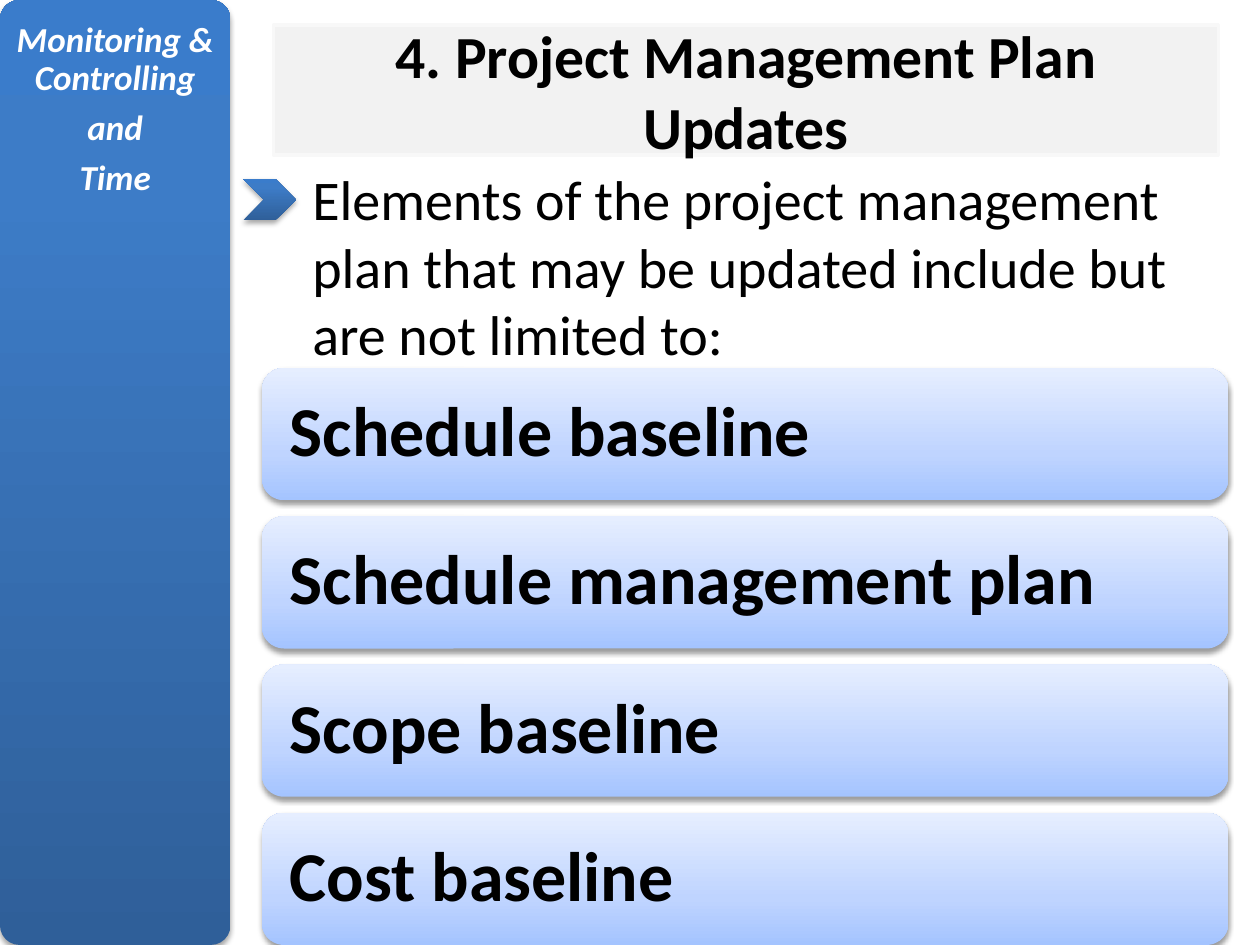
from copy import deepcopy
from dataclasses import dataclass

from lxml.etree import SubElement
from pptx import Presentation
from pptx.dml.color import RGBColor
from pptx.enum.shapes import MSO_SHAPE
from pptx.enum.text import MSO_ANCHOR, PP_ALIGN
from pptx.oxml.ns import qn
from pptx.util import Inches, Pt


@dataclass(frozen=True)
class Theme:
    font: str = "Calibri"
    ink: str = "000000"
    paper: str = "FFFFFF"
    banner: str = "F2F2F2"
    banner_edge: str = "F8F8F8"
    deep_blue: tuple = ((0, "2F5F99"), (0.8, "3D7CC7"), (1, "3A7CCB"))
    pale_blue: tuple = ((0, "A4C4FF"), (0.35, "BFD4FF"), (1, "E6EEFF"))
    sidebar_size: float = 20
    body_size: float = 32
    title_size: float = 34.1
    item_size: float = 40


def write(shape, text, *, theme, size, color, bold=False, italic=False,
          align=PP_ALIGN.LEFT, anchor=MSO_ANCHOR.MIDDLE, spacing=1.0,
          after=0, inset_x=0.1, inset_y=0.05):
    frame = shape.text_frame
    frame.word_wrap = True
    frame.vertical_anchor = anchor
    frame.margin_left = frame.margin_right = Inches(inset_x)
    frame.margin_top = frame.margin_bottom = Inches(inset_y)
    frame.text = text
    for paragraph in frame.paragraphs:
        paragraph.alignment = align
        paragraph.line_spacing = spacing
        paragraph.space_after = Pt(after)
        for run in paragraph.runs:
            font = run.font
            font.name, font.size = theme.font, Pt(size)
            font.bold, font.italic = bold, italic
            font.color.rgb = RGBColor.from_string(color)


class Deck:
    def __init__(self, theme):
        self.theme = theme
        self.presentation = Presentation()
        self.presentation.slide_width = Inches(10)
        self.presentation.slide_height = Inches(7.5)
        self.slide = self.presentation.slides.add_slide(
            self.presentation.slide_layouts[6])

    def shape(self, preset, box):
        shape = self.slide.shapes.add_shape(preset, *map(Inches, box))
        shape.shadow.inherit = False
        shape.line.fill.background()
        return shape

    def raised(self, preset, box, stops, opacity):
        shape = self.shape(preset, box)
        shape.fill.gradient()
        shape.fill.gradient_angle = 90
        properties = shape.element.spPr
        stop_list = properties.find(".//" + qn("a:gsLst"))
        stop_list.append(deepcopy(stop_list[-1]))
        for stop, (position, color) in zip(shape.fill.gradient_stops, stops):
            stop.position = position
            stop.color.rgb = RGBColor.from_string(color)
        shadow = SubElement(properties.find(qn("a:effectLst")), qn("a:outerShdw"),
                            blurRad=str(Pt(3.1)), dist=str(Pt(1.8)),
                            dir="5400000", rotWithShape="0")
        black = SubElement(shadow, qn("a:srgbClr"), val=self.theme.ink)
        SubElement(black, qn("a:alpha"), val=str(opacity * 1000))
        return shape

    def sidebar(self, box, text):
        panel = self.raised(MSO_SHAPE.ROUNDED_RECTANGLE, box, self.theme.deep_blue, 35)
        panel.adjustments[0] = 0.085
        write(panel, text, theme=self.theme, size=self.theme.sidebar_size,
              color=self.theme.paper, bold=True, italic=True,
              align=PP_ALIGN.CENTER, anchor=MSO_ANCHOR.TOP, spacing=0.9,
              after=7, inset_x=0.08, inset_y=0.13)

    def title(self, box, text):
        banner = self.shape(MSO_SHAPE.RECTANGLE, box)
        banner.fill.solid()
        banner.fill.fore_color.rgb = RGBColor.from_string(self.theme.banner)
        banner.line.color.rgb = RGBColor.from_string(self.theme.banner_edge)
        banner.line.width = Pt(2)
        write(banner, text, theme=self.theme, size=self.theme.title_size,
              color=self.theme.ink, bold=True, align=PP_ALIGN.CENTER, inset_x=0.2)

    def body(self, box, text):
        intro = self.slide.shapes.add_textbox(*map(Inches, box))
        write(intro, text, theme=self.theme, size=self.theme.body_size,
              color=self.theme.ink, anchor=MSO_ANCHOR.TOP)

    def marker(self, box):
        self.raised(MSO_SHAPE.CHEVRON, box, self.theme.deep_blue, 35)

    def item(self, box, text):
        bar = self.raised(MSO_SHAPE.ROUNDED_RECTANGLE, box, self.theme.pale_blue, 38)
        write(bar, text, theme=self.theme, size=self.theme.item_size,
              color=self.theme.ink, bold=True, spacing=0.9, inset_x=0.17)

    def save(self):
        self.presentation.save("out.pptx")


def main():
    deck = Deck(Theme())
    deck.sidebar((0, 0, 1.83, 7.5), "Monitoring & Controlling\nand\nTime")
    deck.body((2.38, 1.26, 7.29, 1.8),
              "Elements of the project management plan that may be updated "
              "include but are not limited to:")
    deck.title((2.17, 0.2, 7.5, 1.03), "4. Project Management Plan Updates")

    elements = ("Schedule baseline", "Schedule management plan",
                "Scope baseline", "Cost baseline")
    first_top, last_top, height = 2.92, 6.45, 1.05
    pitch = (last_top - first_top) / (len(elements) - 1)
    for index, element in enumerate(elements):
        deck.item((2.08, first_top + index * pitch, 7.67, height), element)

    deck.marker((1.93, 1.42, 0.42, 0.33))
    deck.save()


if __name__ == "__main__":
    main()
